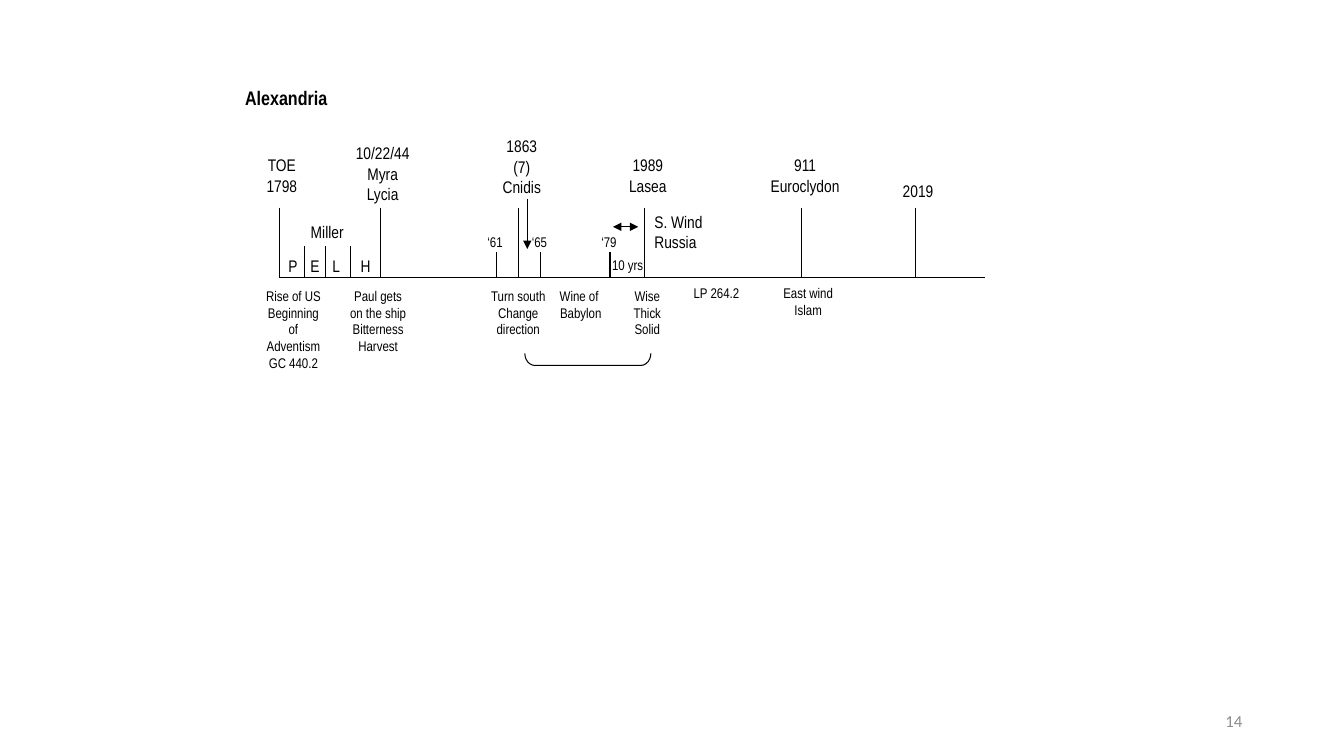
import pptx
import pptx.util
import pptx.dml.color
import pptx.enum.shapes
import pptx.enum.text
import pptx.oxml.ns
import lxml.etree

PX = 9144
AXIS_Y = 275
BLACK = "000000"
GREY = "8C8C8C"
LEFT = pptx.enum.text.PP_ALIGN.LEFT
CENTER = pptx.enum.text.PP_ALIGN.CENTER
RIGHT = pptx.enum.text.PP_ALIGN.RIGHT
qn = pptx.oxml.ns.qn

prs = pptx.Presentation()
prs.slide_width = 1333 * PX
prs.slide_height = 750 * PX
s = prs.slides.add_slide(prs.slide_layouts[6])


def add_text(x, y, w, h, text, size=12, align=CENTER, bold=False, font="Arial Narrow", color=BLACK):
    tf = s.shapes.add_textbox(x * PX, y * PX, w * PX, h * PX).text_frame
    tf.word_wrap = True
    tf.margin_left = tf.margin_right = tf.margin_top = tf.margin_bottom = 4 * PX
    tf.text = text
    for p in tf.paragraphs:
        p.alignment = align
        for r in p.runs:
            r.font.size = pptx.util.Pt(size)
            r.font.name = font
            r.font.bold = bold
            r.font.color.rgb = pptx.dml.color.RGBColor.from_string(color)
    return tf


def add_line(x1, y1, x2, y2, *arrow_ends):
    c = s.shapes.add_connector(
        pptx.enum.shapes.MSO_CONNECTOR.STRAIGHT, x1 * PX, y1 * PX, x2 * PX, y2 * PX
    )
    c.line.width = pptx.util.Pt(0.75)
    c.line.color.rgb = pptx.dml.color.RGBColor.from_string(BLACK)
    for end in arrow_ends:
        lxml.etree.SubElement(c.line._get_or_add_ln(), qn("a:" + end), type="triangle")
    lxml.etree.SubElement(c._element.spPr, qn("a:effectLst"))


tf = add_text(942, 695, 300, 40, "14", align=RIGHT, font="Calibri", color=GREY)
tf.vertical_anchor = pptx.enum.text.MSO_ANCHOR.MIDDLE
tf.margin_left = tf.margin_right = 10 * PX

add_text(239, 81, 188, 44, "Alexandria", 14, LEFT, True)

add_line(277, AXIS_Y, 977, AXIS_Y)
for top, xs in [
    (206, [277, 377, 514, 639, 795, 908]),
    (244, [302, 323, 348]),
    (250, [492, 536, 605]),
]:
    for x in xs:
        add_line(x, top, x, AXIS_Y)

for x, y, h, event in [
    (239, 150, 50, "TOE\n1798"),
    (339, 138, 69, "10/22/44\nMyra\nLycia"),
    (477, 131, 69, "1863\n(7)\nCnidis"),
    (602, 150, 50, "1989\nLasea"),
    (758, 150, 50, "911\nEuroclydon"),
    (870, 175, 25, "2019"),
]:
    add_text(x, y, 81, h, event)

add_text(645, 206, 81, 50, "S. Wind\nRussia", align=LEFT)
add_text(285, 216, 79, 24, "Miller")
for x, letter in [(280, "P"), (302, "E"), (323, "L"), (352, "H")]:
    add_text(x, 250, 21, 24, letter)

for x, y, w, h, note in [
    (477, 228, 28, 24, "‘61"),
    (523, 228, 24, 24, "‘65"),
    (592, 228, 24, 24, "‘79"),
    (602, 250, 41, 24, "10 yrs"),
    (258, 281, 66, 109, "Rise of US\nBeginning of\nAdventism\nGC 440.2"),
    (342, 281, 66, 75, "Paul gets on the ship\nBitterness\nHarvest"),
    (483, 281, 62, 56, "Turn south\nChange\ndirection"),
    (548, 281, 56, 50, "Wine of \nBabylon"),
    (614, 281, 56, 62, "Wise\nThick\nSolid"),
    (673, 278, 75, 24, "LP 264.2"),
    (761, 278, 81, 50, "East wind\nIslam"),
]:
    add_text(x, y, w, h, note, 10)

add_line(523, 197, 523, 247, "tailEnd")
add_line(608, 225, 633, 225, "headEnd", "tailEnd")

sp = s.shapes.add_shape(
    pptx.enum.shapes.MSO_SHAPE.LEFT_BRACKET, 577 * PX, 294 * PX, 12 * PX, 125 * PX
)
sp.rotation = 270
sp.adjustments[0] = 0.83
sp.shadow.inherit = False
sp.fill.background()
sp.line.width = pptx.util.Pt(0.75)
sp.line.color.rgb = pptx.dml.color.RGBColor.from_string(BLACK)

prs.save("out.pptx")
